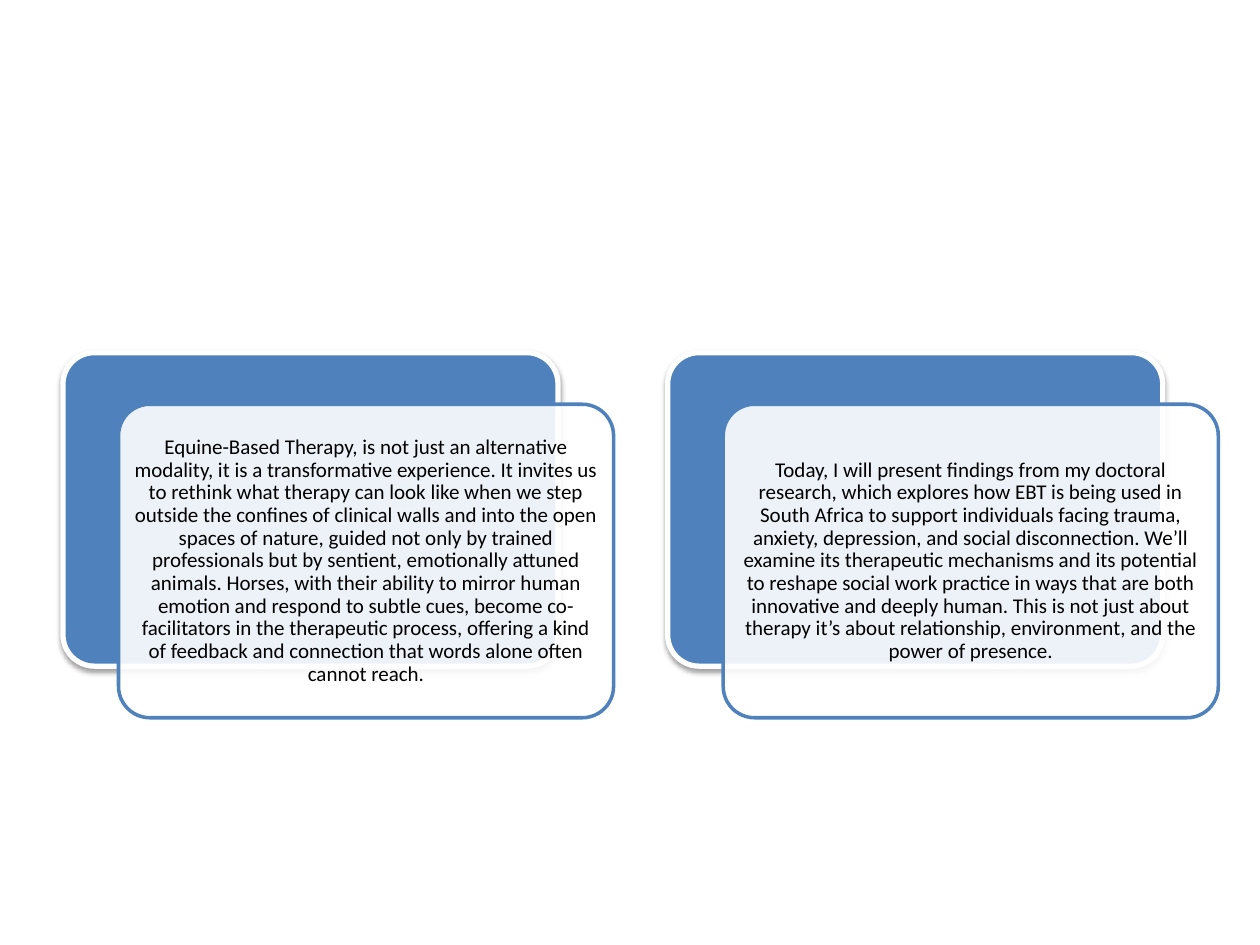
from dataclasses import dataclass

from lxml.etree import SubElement
from pptx import Presentation
from pptx.dml.color import RGBColor
from pptx.enum.shapes import MSO_SHAPE
from pptx.enum.text import MSO_ANCHOR, PP_ALIGN
from pptx.oxml.ns import qn
from pptx.shapes.autoshape import Shape
from pptx.slide import Slide
from pptx.util import Cm, Pt

COLORS = {"blue": "4F81BD", "white": "FFFFFF", "black": "000000"}

CARD_WIDTH, CARD_HEIGHT = 9.98, 6.32
FIRST_LEFT, CARD_TOP = 1.27, 7.11
CARD_PITCH = 12.19
FRONT_SHIFT_X, FRONT_SHIFT_Y = 1.12, 1.04
TEXT_INSET = 0.18
TEXT_MARGIN = 0.13


@dataclass
class Panel:
    left: float
    top: float
    fill: str
    line: str
    line_width: float


def color(name: str) -> RGBColor:
    return RGBColor.from_string(COLORS[name])


def draw_panel(slide: Slide, panel: Panel) -> Shape:
    shape = slide.shapes.add_shape(
        MSO_SHAPE.ROUNDED_RECTANGLE,
        Cm(panel.left), Cm(panel.top), Cm(CARD_WIDTH), Cm(CARD_HEIGHT),
    )
    shape.adjustments[0] = 0.1
    shape.shadow.inherit = False
    shape.fill.solid()
    shape.fill.fore_color.rgb = color(panel.fill)
    shape.line.color.rgb = color(panel.line)
    shape.line.width = Pt(panel.line_width)
    return shape


def add_shadow(shape: Shape) -> None:
    effects = shape._element.spPr.find(qn("a:effectLst"))
    shadow = SubElement(
        effects, qn("a:outerShdw"),
        blurRad="40000", dist="20000", dir="5400000", rotWithShape="0",
    )
    tint = SubElement(shadow, qn("a:srgbClr"), val=COLORS["black"])
    SubElement(tint, qn("a:alpha"), val="38000")


def set_opacity(shape: Shape, percent: int) -> None:
    tint = shape._element.spPr.find(qn("a:solidFill")).find(qn("a:srgbClr"))
    SubElement(tint, qn("a:alpha"), val=str(percent * 1000))


def draw_statement(slide: Slide, left: float, top: float, statement: str) -> None:
    box = slide.shapes.add_textbox(
        Cm(left + TEXT_INSET), Cm(top + TEXT_INSET),
        Cm(CARD_WIDTH - 2 * TEXT_INSET), Cm(CARD_HEIGHT - 2 * TEXT_INSET),
    )
    frame = box.text_frame
    frame.word_wrap = True
    frame.vertical_anchor = MSO_ANCHOR.MIDDLE
    frame.margin_left = frame.margin_right = Cm(TEXT_MARGIN)
    frame.margin_top = frame.margin_bottom = Cm(TEXT_MARGIN)
    paragraph = frame.paragraphs[0]
    paragraph.alignment = PP_ALIGN.CENTER
    paragraph.line_spacing = 0.9
    run = paragraph.add_run()
    run.text = statement
    run.font.name = "Calibri"
    run.font.size = Pt(12)
    run.font.color.rgb = color("black")


def draw_card(slide: Slide, left: float, statement: str) -> None:
    add_shadow(draw_panel(slide, Panel(left, CARD_TOP, "blue", "white", 3)))
    front = Panel(left + FRONT_SHIFT_X, CARD_TOP + FRONT_SHIFT_Y, "white", "blue", 2)
    set_opacity(draw_panel(slide, front), 90)
    draw_statement(slide, front.left, front.top, statement)


STATEMENTS = [
    "Equine-Based Therapy, is not just an alternative modality, it is a "
    "transformative experience. It invites us to rethink what therapy can look "
    "like when we step outside the confines of clinical walls and into the open "
    "spaces of nature, guided not only by trained professionals but by sentient, "
    "emotionally attuned animals. Horses, with their ability to mirror human "
    "emotion and respond to subtle cues, become co-facilitators in the "
    "therapeutic process, offering a kind of feedback and connection that words "
    "alone often cannot reach.",
    "Today, I will present findings from my doctoral research, which explores "
    "how EBT is being used in South Africa to support individuals facing trauma, "
    "anxiety, depression, and social disconnection. We’ll examine its "
    "therapeutic mechanisms and its potential to reshape social work practice in "
    "ways that are both innovative and deeply human. This is not just about "
    "therapy it’s about relationship, environment, and the power of presence.",
]


def main() -> None:
    presentation = Presentation()
    presentation.slide_width = Cm(25.4)
    presentation.slide_height = Cm(19.05)
    slide = presentation.slides.add_slide(presentation.slide_layouts[6])
    for index, statement in enumerate(STATEMENTS):
        draw_card(slide, FIRST_LEFT + index * CARD_PITCH, statement)
    presentation.save("out.pptx")


if __name__ == "__main__":
    main()
